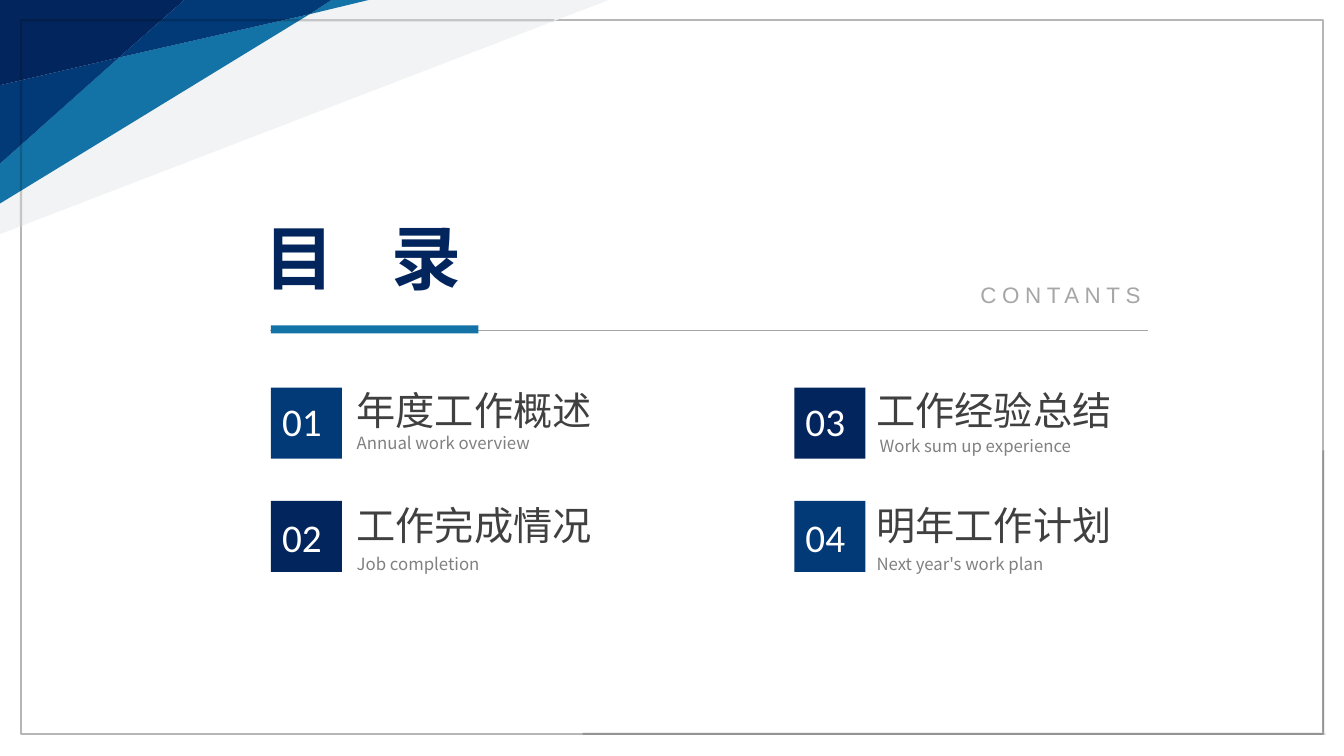
from dataclasses import dataclass

from lxml.etree import SubElement
from pptx import Presentation
from pptx.dml.color import RGBColor
from pptx.enum.shapes import MSO_CONNECTOR, MSO_SHAPE
from pptx.enum.text import MSO_ANCHOR, MSO_AUTO_SIZE, PP_ALIGN
from pptx.oxml.ns import qn
from pptx.shapes.autoshape import Shape
from pptx.slide import Slide
from pptx.text.text import TextFrame
from pptx.util import Cm, Pt


@dataclass(frozen=True)
class Theme:
    navy: str = "03255D"
    blue: str = "023977"
    teal: str = "1372A6"
    pale: str = "F1F3F4"
    white: str = "FFFFFF"
    black: str = "000000"
    dark: str = "404040"
    gray: str = "808080"
    light: str = "A6A6A6"
    frame: str = "B6B6B6"
    sans: str = "Noto Sans CJK SC"
    digit: str = "Calibri"
    latin: str = "Arial"
    title: int = 50
    head: int = 28
    label: int = 16
    note: int = 12


THEME = Theme()


@dataclass(frozen=True)
class Box:
    left: float
    top: float
    width: float
    height: float

    def place(self) -> tuple[Cm, Cm, Cm, Cm]:
        return Cm(self.left), Cm(self.top), Cm(self.width), Cm(self.height)


@dataclass(frozen=True)
class Style:
    size: int
    color: str
    font: str
    bold: bool = False
    gap: int = 0


@dataclass(frozen=True)
class Facet:
    color: str
    points: tuple[tuple[float, float], ...]


@dataclass(frozen=True)
class Rule:
    start: tuple[float, float]
    end: tuple[float, float]
    color: str = THEME.black
    weight: float = 1.5
    alpha: int = 18


@dataclass(frozen=True)
class Entry:
    number: str
    head: str
    note: str
    color: str
    column: int
    row: int
    note_left: float
    note_top: float


EDGE = -0.05
FACETS = (
    Facet(THEME.pale, ((15.47, EDGE), (EDGE, 5.92), (EDGE, EDGE))),
    Facet(THEME.teal, ((9.5, EDGE), (7.8, 0.36), (8.43, EDGE))),
    Facet(THEME.teal, ((7.8, 0.36), (EDGE, 5.16), (EDGE, 4.17), (3, 1.45))),
    Facet(THEME.blue, ((3, 1.45), (EDGE, 4.17), (EDGE, 2.16))),
    Facet(THEME.navy, ((4.7, EDGE), (3, 1.45), (EDGE, 2.16), (EDGE, EDGE))),
    Facet(THEME.blue, ((8.43, EDGE), (7.8, 0.36), (3, 1.45), (4.7, EDGE))),
)
RULES = (
    Rule((6.81, 8.33), (28.93, 8.33), THEME.light, 0.5, 100),
    Rule((0.56, 0.51), (13.97, 0.51)),
    Rule((0.53, 5.69), (0.53, 0.48)),
    Rule((33.35, 11.35), (33.35, 18.44)),
    Rule((14.68, 18.49), (33.4, 18.49)),
)
ENTRIES = (
    Entry("01", "年度工作概述", "Annual work overview", THEME.blue, 0, 0, 8.74, 10.77),
    Entry("02", "工作完成情况", "Job completion", THEME.navy, 0, 1, 8.74, 13.82),
    Entry("03", "工作经验总结", "Work sum up experience", THEME.navy, 1, 0, 21.92, 10.85),
    Entry("04", "明年工作计划", "Next year's work plan", THEME.blue, 1, 1, 21.84, 13.82),
)


def paint(shape: Shape, color: str) -> None:
    shape.shadow.inherit = False
    shape.fill.solid()
    shape.fill.fore_color.rgb = RGBColor.from_string(color)
    shape.line.fill.background()


def draw_block(slide: Slide, box: Box, color: str) -> None:
    paint(slide.shapes.add_shape(MSO_SHAPE.RECTANGLE, *box.place()), color)


def draw_frame(slide: Slide, box: Box) -> None:
    frame = slide.shapes.add_shape(MSO_SHAPE.RECTANGLE, *box.place())
    frame.shadow.inherit = False
    frame.fill.background()
    frame.line.color.rgb = RGBColor.from_string(THEME.frame)
    frame.line.width = Pt(1.5)


def draw_facet(slide: Slide, facet: Facet) -> None:
    first, *rest = [(Cm(x), Cm(y)) for x, y in facet.points]
    form = slide.shapes.build_freeform(*first)
    form.add_line_segments(rest, close=True)
    paint(form.convert_to_shape(), facet.color)


def draw_rule(slide: Slide, rule: Rule) -> None:
    ends = [Cm(value) for value in rule.start + rule.end]
    line = slide.shapes.add_connector(MSO_CONNECTOR.STRAIGHT, *ends)
    line.line.color.rgb = RGBColor.from_string(rule.color)
    line.line.width = Pt(rule.weight)
    props = line._element.spPr
    if rule.alpha < 100:
        tint = props.find(".//" + qn("a:srgbClr"))
        SubElement(tint, qn("a:alpha"), val=str(rule.alpha * 1000))
    SubElement(props, qn("a:effectLst"))


def write(frame: TextFrame, text: str, style: Style, align: PP_ALIGN) -> None:
    frame.text = text
    frame.word_wrap = True
    frame.vertical_anchor = MSO_ANCHOR.TOP
    line = frame.paragraphs[0]
    line.alignment = align
    run = line.runs[0]
    run.font.size = Pt(style.size)
    run.font.bold = style.bold
    run.font.name = style.font
    run.font.color.rgb = RGBColor.from_string(style.color)
    props = run._r.get_or_add_rPr()
    SubElement(props, qn("a:ea"), typeface=style.font)
    if style.gap:
        props.set("spc", str(style.gap * 100))


def draw_text(slide: Slide, box: Box, text: str, style: Style,
              align: PP_ALIGN = PP_ALIGN.LEFT) -> None:
    frame = slide.shapes.add_textbox(*box.place()).text_frame
    write(frame, text, style, align)
    frame.auto_size = MSO_AUTO_SIZE.SHAPE_TO_FIT_TEXT


def draw_title(slide: Slide, box: Box, text: str) -> None:
    title = slide.shapes.title
    title.left, title.top, title.width, title.height = box.place()
    style = Style(THEME.title, THEME.navy, THEME.sans, True, 15)
    write(title.text_frame, text, style, PP_ALIGN.LEFT)
    title.text_frame.auto_size = MSO_AUTO_SIZE.NONE
    title.text_frame.paragraphs[0].line_spacing = 0.9


def draw_entry(slide: Slide, entry: Entry) -> None:
    left = 6.83 + 13.19 * entry.column
    side = 8.74 + 13.1 * entry.column
    drop = 2.92 * entry.row
    digit = Style(THEME.head, THEME.white, THEME.digit)
    head = Style(THEME.head, THEME.dark, THEME.sans)
    note = Style(THEME.note, THEME.gray, THEME.sans)
    draw_block(slide, Box(left, 9.77 + 2.85 * entry.row, 1.79, 1.79), entry.color)
    draw_text(slide, Box(left + 0.03, 9.88 + drop, 1.8, 1.45), entry.number, digit)
    draw_text(slide, Box(side, 9.6 + drop, 8.28, 1.45), entry.head, head)
    draw_text(slide, Box(entry.note_left, entry.note_top, 8.56, 0.76), entry.note, note)


def main() -> None:
    deck = Presentation()
    deck.slide_width, deck.slide_height = Cm(33.87), Cm(19.05)
    slide = deck.slides.add_slide(deck.slide_layouts[5])
    draw_frame(slide, Box(0.53, 0.51, 32.82, 17.98))
    for facet in FACETS:
        draw_facet(slide, facet)
    draw_title(slide, Box(6.4, 5.51, 24.41, 2.41), "目 录")
    for rule in RULES:
        draw_rule(slide, rule)
    draw_block(slide, Box(6.83, 8.2, 5.23, 0.2), THEME.teal)
    label = Style(THEME.label, THEME.light, THEME.latin, gap=4)
    draw_text(slide, Box(23.57, 6.96, 6.32, 0.94), "CONTANTS", label, PP_ALIGN.CENTER)
    for entry in ENTRIES:
        draw_entry(slide, entry)
    deck.save("out.pptx")


if __name__ == "__main__":
    main()
